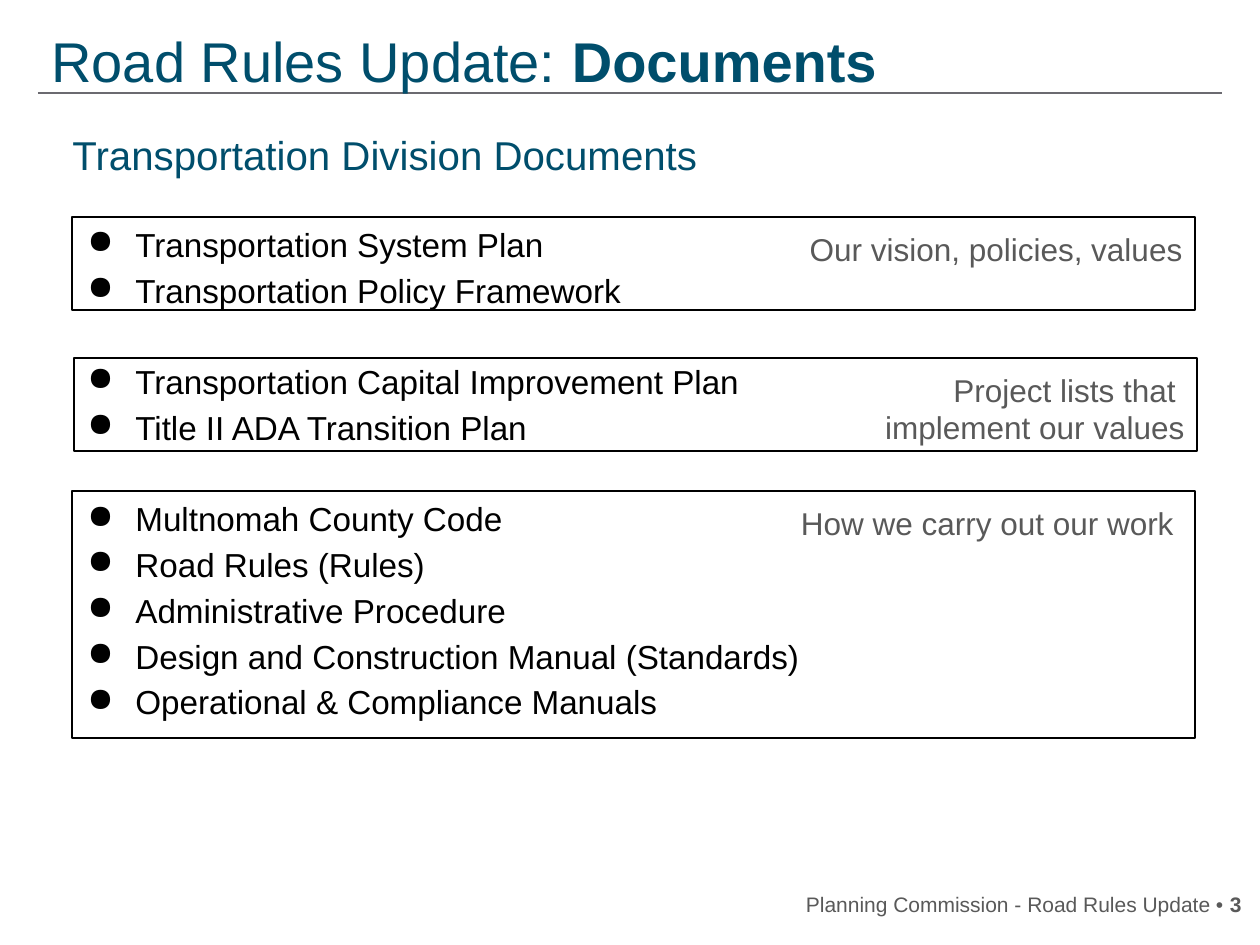
from lxml import etree
from pptx import Presentation, util as u
from pptx.dml.color import RGBColor
from pptx.enum import shapes, text
from pptx.oxml.ns import qn

TEAL = RGBColor(0x00, 0x4E, 0x6C)
GRAY = RGBColor(0x59, 0x59, 0x59)
RULE = RGBColor(0x6B, 0x6A, 0x70)
BLACK = RGBColor(0, 0, 0)


def px(length):
    return u.Emu(round(length * 914400 / 126))


class DocumentsSlide:
    font = "Arial"
    line_spacing = 1.15
    bullet_indent = 63
    bullet_hang = 48

    def __init__(self, slide):
        self.slide = slide

    def rule(self, x1, x2, y):
        line = self.slide.shapes.add_connector(
            shapes.MSO_CONNECTOR.STRAIGHT, px(x1), px(y), px(x2), px(y))
        line.line.color.rgb = RULE
        line.line.width = u.Pt(1)
        etree.SubElement(line.element.spPr, qn("a:effectLst"))

    def frame(self, shape, inset_y, anchor=text.MSO_ANCHOR.TOP):
        frame = shape.text_frame
        frame.word_wrap = True
        frame.vertical_anchor = anchor
        frame.margin_left = frame.margin_right = u.Inches(0.1)
        frame.margin_top = frame.margin_bottom = u.Inches(inset_y)
        return frame

    def text_box(self, x, y, w, h, inset_y=0.05, anchor=text.MSO_ANCHOR.TOP):
        box = self.slide.shapes.add_textbox(px(x), px(y), px(w), px(h))
        return self.frame(box, inset_y, anchor)

    def paragraph(self, frame, index, align=text.PP_ALIGN.LEFT):
        paragraph = frame.add_paragraph() if index else frame.paragraphs[0]
        paragraph.alignment = align
        return paragraph

    def run(self, paragraph, words, size, color, bold=False):
        run = paragraph.add_run()
        run.text = words
        run.font.name = self.font
        run.font.size = u.Pt(size)
        run.font.color.rgb = color
        run.font.bold = bold

    def outlined_note(self, x, y, w, h, lines):
        box = self.slide.shapes.add_shape(
            shapes.MSO_SHAPE.RECTANGLE, px(x), px(y), px(w), px(h))
        box.shadow.inherit = False
        box.fill.background()
        box.line.color.rgb = BLACK
        box.line.width = u.Pt(0.75)
        frame = self.frame(box, 0.1)
        for index, words in enumerate(lines):
            self.run(self.paragraph(frame, index, text.PP_ALIGN.RIGHT), words, 18, GRAY)

    def bullet(self, frame, words, gap):
        item = self.paragraph(frame, 1)
        item.line_spacing = self.line_spacing
        item.space_before = u.Pt(gap)
        props = item._p.get_or_add_pPr()
        props.set("marL", str(px(self.bullet_indent)))
        props.set("indent", str(-px(self.bullet_hang)))
        color = etree.SubElement(props, qn("a:buClr"))
        etree.SubElement(color, qn("a:srgbClr"), val=str(BLACK))
        etree.SubElement(props, qn("a:buChar"), char="●")
        self.run(item, words, 19, BLACK)


def main():
    deck = Presentation()
    deck.slide_width, deck.slide_height = u.Inches(10), u.Inches(7.5)
    page = DocumentsSlide(deck.slides.add_slide(deck.slide_layouts[6]))

    page.rule(38, 1222, 93)
    title = page.paragraph(page.text_box(39, 20, 1193, 64), 0)
    page.run(title, "Road Rules Update:", 32, TEAL)
    page.run(title, " Documents", 32, TEAL, bold=True)

    groups = [
        (72, 217, 93, ["Our vision, policies, values"], 22.5,
         ["Transportation System Plan", "Transportation Policy Framework"]),
        (74, 358, 93, ["Project lists that ", "implement our values"], 26,
         ["Transportation Capital Improvement Plan", "Title II ADA Transition Plan"]),
        (72, 491, 247, ["How we carry out our work "], 26,
         ["Multnomah County Code", "Road Rules (Rules)", "Administrative Procedure",
          "Design and Construction Manual (Standards)",
          "Operational & Compliance Manuals"]),
    ]
    documents = page.text_box(60, 117, 1103, 656)
    heading = page.paragraph(documents, 0)
    heading.line_spacing = page.line_spacing
    page.run(heading, "Transportation Division Documents", 23, TEAL)
    for x, y, height, purpose, gap, names in groups:
        page.outlined_note(x, y, 1123, height, purpose)
        for index, name in enumerate(names):
            page.bullet(documents, name, 0 if index else gap)

    footer_frame = page.text_box(678, 868, 576, 72, 0.1, text.MSO_ANCHOR.MIDDLE)
    footer = page.paragraph(footer_frame, 0, text.PP_ALIGN.RIGHT)
    page.run(footer, "Planning Commission - Road Rules Update • ", 12, GRAY)
    page.run(footer, "3", 12, GRAY, bold=True)

    deck.save("out.pptx")


if __name__ == "__main__":
    main()
